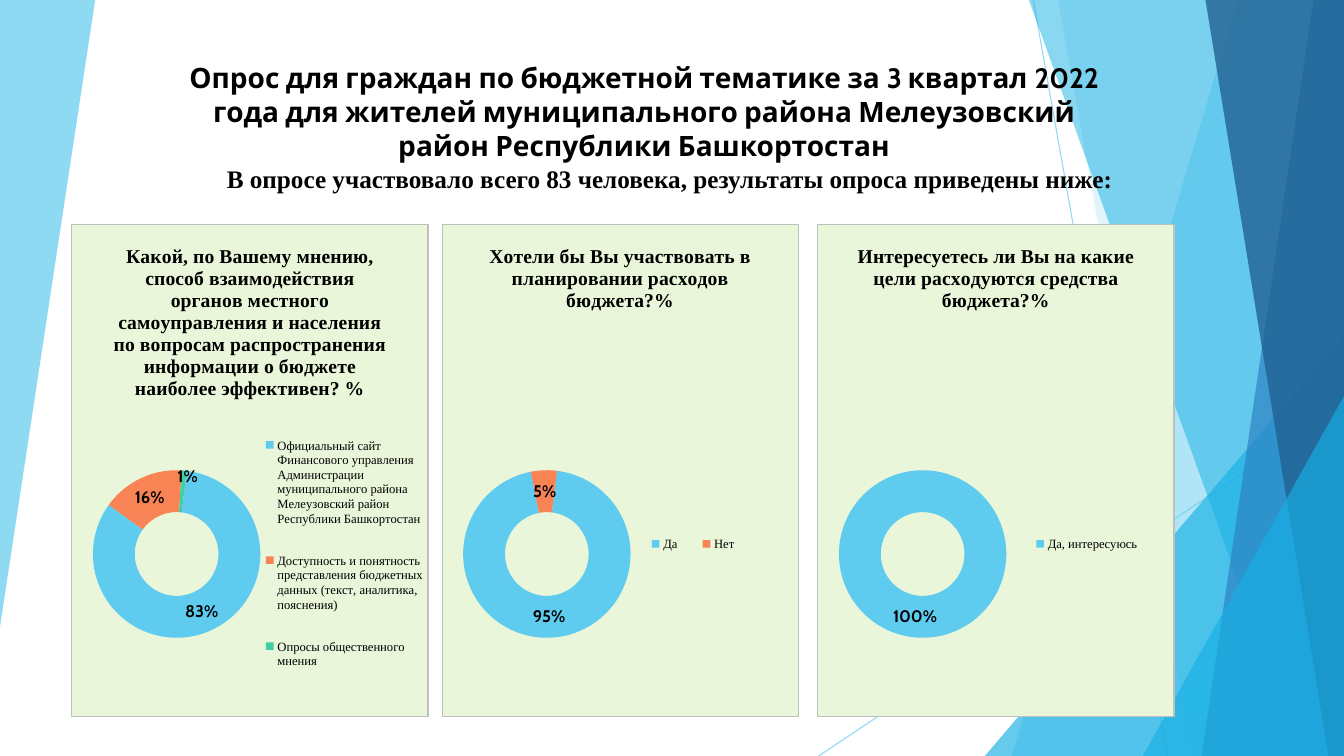
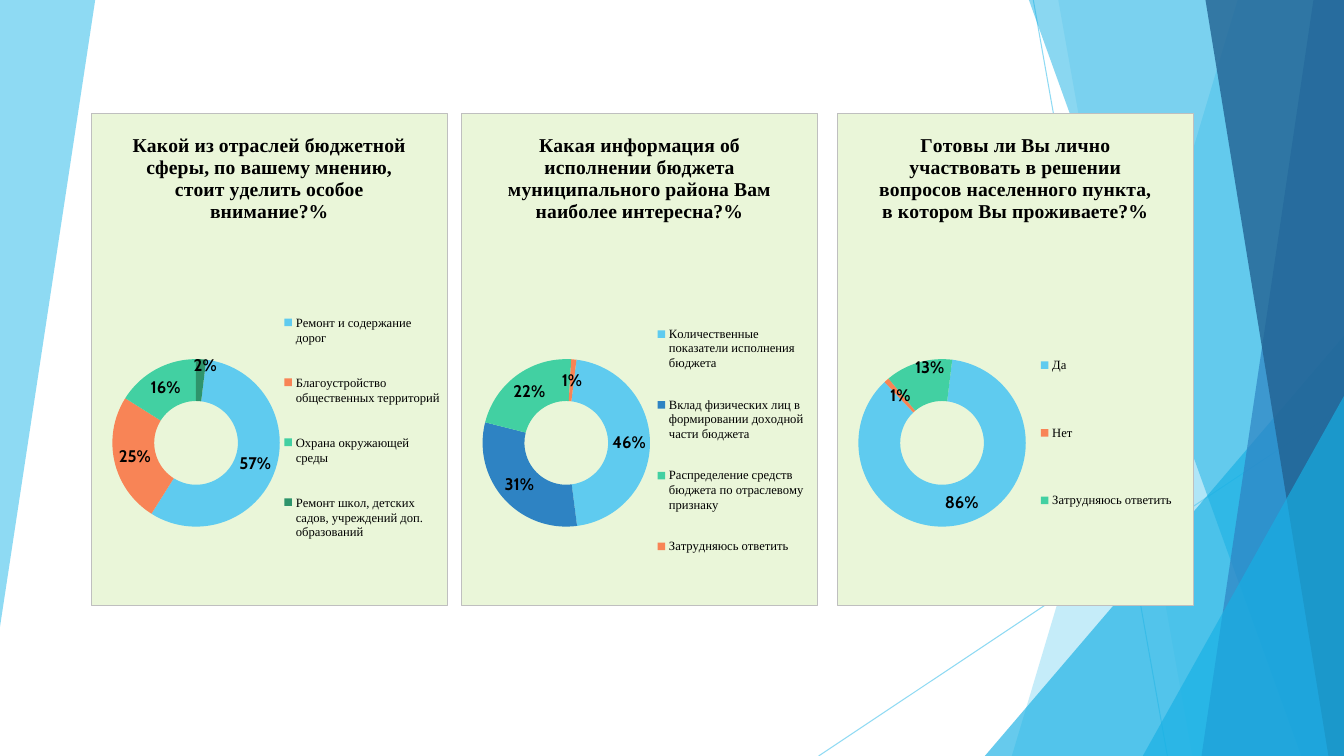
from dataclasses import dataclass

from lxml.etree import SubElement
from pptx import Presentation
from pptx.chart.data import CategoryChartData
from pptx.dml.color import RGBColor
from pptx.enum.chart import XL_CHART_TYPE, XL_LEGEND_POSITION
from pptx.enum.shapes import MSO_CONNECTOR, MSO_SHAPE
from pptx.enum.text import MSO_ANCHOR, PP_ALIGN
from pptx.oxml import parse_xml
from pptx.oxml.ns import nsdecls, qn
from pptx.util import Cm, Pt


@dataclass(frozen=True)
class Theme:
    sky: str = "5FCBEF"
    cyan: str = "17B0E4"
    blue: str = "2E83C3"
    navy: str = "226292"
    orange: str = "F88456"
    mint: str = "42D0A2"
    green: str = "2E946B"
    panel: str = "EAF6D9"
    border: str = "BFBFBF"
    text: str = "000000"
    sans: str = "Cabin"
    serif: str = "Times New Roman"
    title: int = 20
    subtitle: int = 18
    chart_title: int = 14
    label: int = 12
    body: int = 10
    legend: int = 9


T = Theme()
WIDTH, HEIGHT = 33.87, 19.05
PANEL_W, PANEL_H = 9.0, 12.42
PANEL_LEFTS = (0, 9.33, 18.8)
PLOT_BOX = (0.059, 0.433, 0.47, 0.475)
LABEL_SHIFT = (0.015, -0.03)

TITLE = ("Опрос для граждан по бюджетной тематике за 3 квартал 2022 года для жителей "
         "муниципального района Мелеузовский район Республики Башкортостан")
SUBTITLE = "В опросе участвовало всего 83 человека, результаты опроса приведены ниже:"

SLIDES = [
    {"title": TITLE, "subtitle": SUBTITLE, "origin": (1.8, 5.64), "charts": [
        {"title": "Какой, по Вашему мнению, способ взаимодействия органов местного самоуправления "
                  "и населения по вопросам распространения информации о бюджете наиболее эффективен? %",
         "answers": [
             ("Официальный сайт Финансового управления Администрации муниципального района "
              "Мелеузовский район Республики Башкортостан", 83, T.sky),
             ("Доступность и понятность представления бюджетных данных "
              "(текст, аналитика, пояснения)", 16, T.orange),
             ("Опросы общественного мнения", 1, T.mint)],
         "legend": (0.53, 0.38, 0.47, 0.58), "shifted": 2},
        {"title": "Хотели бы Вы участвовать в планировании расходов бюджета?%",
         "answers": [("Да", 95, T.sky), ("Нет", 5, T.orange)],
         "legend": (0.53, 0.39, 0.35, 0.52)},
        {"title": "Интересуетесь ли Вы на какие цели расходуются средства бюджета?%",
         "answers": [("Да, интересуюсь", 100, T.sky)],
         "legend": (0.53, 0.39, 0.45, 0.52)},
    ]},
    {"origin": (2.29, 2.84), "charts": [
        {"title": "Какой из отраслей бюджетной сферы, по вашему мнению, "
                  "стоит уделить особое внимание?%",
         "answers": [
             ("Ремонт и содержание дорог", 57, T.sky),
             ("Благоустройство общественных территорий", 25, T.orange),
             ("Охрана окружающей среды", 16, T.mint),
             ("Ремонт школ, детских садов, учреждений доп. образований", 2, T.green)],
         "legend": (0.54, 0.35, 0.44, 0.58), "shifted": 3},
        {"title": "Какая информация об исполнении бюджета муниципального района "
                  "Вам наиболее интересна?%",
         "answers": [
             ("Количественные показатели исполнения бюджета", 46, T.sky),
             ("Вклад физических лиц в формировании доходной части бюджета", 31, T.blue),
             ("Распределение средств бюджета по отраслевому признаку", 22, T.mint),
             ("Затрудняюсь ответить", 1, T.orange)],
         "legend": (0.53, 0.38, 0.45, 0.57)},
        {"title": "Готовы ли Вы лично участвовать в решении вопросов населенного пункта, "
                  "в котором Вы проживаете?%",
         "answers": [("Да", 86, T.sky), ("Нет", 1, T.orange), ("Затрудняюсь ответить", 13, T.mint)],
         "legend": (0.53, 0.39, 0.45, 0.52), "shifted": 2},
    ]},
]

DECOR = [
    ("polygon", [(0, 0), (2.4, 0), (0, 15.8)], T.sky, 70),
    ("line", [(26.04, 0), (29.42, HEIGHT)], T.sky, 70),
    ("line", [(WIDTH, 10.23), (20.63, HEIGHT)], T.sky, 70),
    ("polygon", [(31.19, 0), (WIDTH, 0), (WIDTH, HEIGHT), (25.5, HEIGHT)], T.sky, 36),
    ("polygon", [(26.67, 0), (WIDTH, 0), (WIDTH, HEIGHT), (30.05, HEIGHT)], T.sky, 20),
    ("triangle", [(24.82, 8.46), (WIDTH, HEIGHT)], T.cyan, 66),
    ("polygon", [(25.93, 0), (WIDTH, 0), (WIDTH, HEIGHT), (32.79, HEIGHT)], T.cyan, 50),
    ("polygon", [(33.1, 0), (WIDTH, 0), (WIDTH, HEIGHT), (30.28, HEIGHT)], T.blue, 70),
    ("polygon", [(30.38, 0), (WIDTH, 0), (WIDTH, HEIGHT), (33.48, HEIGHT)], T.navy, 80),
    ("triangle", [(28.8, 9.98), (WIDTH, HEIGHT)], T.cyan, 66),
]


def set_font(font, size, name, bold=False):
    font.size = Pt(size)
    font.name = name
    font.bold = bold
    font.color.rgb = RGBColor.from_string(T.text)


def write_text(tf, text, size, name, bold=True, align=PP_ALIGN.CENTER):
    p = tf.paragraphs[0]
    p.alignment = align
    r = p.add_run()
    r.text = text
    set_font(r.font, size, name, bold)


def place(sp, left, top, width, height):
    sp.left, sp.top, sp.width, sp.height = map(Cm, (left, top, width, height))


def set_alpha(sp, percent):
    color = sp.element.spPr.find(".//" + qn("a:srgbClr"))
    SubElement(color, qn("a:alpha")).set("val", str(percent * 1000))


def draw_decor(shapes, kind, points, color, alpha):
    points = [(Cm(x), Cm(y)) for x, y in points]
    if kind == "line":
        sp = shapes.add_connector(MSO_CONNECTOR.STRAIGHT, *points[0], *points[1])
        sp.line.width = Pt(0.75)
        sp.line.color.rgb = RGBColor.from_string(color)
        SubElement(sp.element.spPr, qn("a:effectLst"))
    else:
        if kind == "polygon":
            builder = shapes.build_freeform(*points[0])
            builder.add_line_segments(points[1:], close=True)
            sp = builder.convert_to_shape()
        else:
            (left, top), (right, bottom) = points
            sp = shapes.add_shape(MSO_SHAPE.ISOSCELES_TRIANGLE, left, top, right - left, bottom - top)
            sp.adjustments[0] = 1
        sp.shadow.inherit = False
        sp.fill.solid()
        sp.fill.fore_color.rgb = RGBColor.from_string(color)
        sp.line.fill.background()
    set_alpha(sp, alpha)
    return sp


def decorate_master(prs, s):
    tree = prs.slide_master.shapes.element
    for i, item in enumerate(DECOR):
        element = draw_decor(s.shapes, *item).element
        element.xpath(".//p:cNvPr")[0].set("id", str(100 + i))
        tree.insert(2 + i, element)


def manual_layout(box, absolute=True, inner=False):
    target = '<c:layoutTarget val="inner"/>' if inner else ""
    modes = '<c:xMode val="edge"/><c:yMode val="edge"/>' if absolute else ""
    sizes = "".join(f'<c:{key} val="{value}"/>' for key, value in zip("xywh", box))
    return parse_xml(f'<c:layout {nsdecls("c")}><c:manualLayout>{target}{modes}{sizes}'
                     "</c:manualLayout></c:layout>")


def style_panel(chart):
    root = chart.element
    root.find(qn("c:chart")).addnext(parse_xml(
        f'<c:spPr {nsdecls("c", "a")}><a:solidFill><a:srgbClr val="{T.panel}"/></a:solidFill>'
        f'<a:ln w="{Pt(0.75)}"><a:solidFill><a:srgbClr val="{T.border}"/></a:solidFill></a:ln></c:spPr>'))
    area = root.xpath("c:chart/c:plotArea")[0]
    for old in area.findall(qn("c:layout")):
        area.remove(old)
    area.insert(0, manual_layout(PLOT_BOX, inner=True))
    root.xpath(".//c:firstSliceAng")[0].set("val", "7")
    root.xpath(".//c:holeSize")[0].set("val", "50")


def add_legend(chart, box):
    chart.has_legend = True
    legend = chart.legend
    legend.position = XL_LEGEND_POSITION.RIGHT
    legend.include_in_layout = False
    set_font(legend.font, T.legend, T.serif)
    element = chart.element.xpath("c:chart/c:legend")[0]
    for old in element.findall(qn("c:layout")):
        element.remove(old)
    element.find(qn("c:legendPos")).addnext(manual_layout(box))


def shift_label(chart, series, index):
    set_font(series.points[index].data_label.font, T.label, T.sans, bold=True)
    label = chart.element.xpath(".//c:ser/c:dLbls/c:dLbl")[0]
    label.find(qn("c:idx")).addnext(manual_layout(LABEL_SHIFT, absolute=False))
    label.find(qn("c:showVal")).set("val", "0")
    label.find(qn("c:showPercent")).set("val", "1")


def add_doughnut(s, left, top, title, answers, legend, shifted=None):
    names, values, colors = zip(*answers)
    data = CategoryChartData()
    data.categories = names
    data.add_series("Series 1", values)
    chart = s.shapes.add_chart(XL_CHART_TYPE.DOUGHNUT, Cm(left), Cm(top),
                               Cm(PANEL_W), Cm(PANEL_H), data).chart
    set_font(chart.font, T.body, T.sans)
    chart.has_title = True
    write_text(chart.chart_title.text_frame, title, T.chart_title, T.serif)
    chart.chart_title.include_in_layout = False
    add_legend(chart, legend)
    plot = chart.plots[0]
    plot.vary_by_categories = True
    series = plot.series[0]
    for i, color in enumerate(colors):
        fill = series.points[i].format.fill
        fill.solid()
        fill.fore_color.rgb = RGBColor.from_string(color)
    labels = series.data_labels
    labels.show_value = False
    labels.show_percentage = True
    set_font(labels.font, T.label, T.sans, bold=True)
    if shifted is not None:
        shift_label(chart, series, shifted)
    style_panel(chart)


def add_heading(s, title, subtitle):
    place(s.shapes.title, 4, 1.5, 24.46, 2.7)
    tf = s.shapes.title.text_frame
    tf.vertical_anchor = MSO_ANCHOR.BOTTOM
    write_text(tf, title, T.title, T.sans)
    tf = s.shapes.add_textbox(Cm(4.88), Cm(3.99), Cm(24), Cm(1.02)).text_frame
    tf.word_wrap = True
    write_text(tf, subtitle, T.subtitle, T.serif)


def main():
    prs = Presentation()
    prs.slide_width, prs.slide_height = Cm(WIDTH), Cm(HEIGHT)
    title_only, blank = prs.slide_layouts[5], prs.slide_layouts[6]
    for content in SLIDES:
        s = prs.slides.add_slide(title_only if "title" in content else blank)
        if "title" in content:
            add_heading(s, content["title"], content["subtitle"])
        left, top = content["origin"]
        for offset, chart in zip(PANEL_LEFTS, content["charts"]):
            add_doughnut(s, left + offset, top, **chart)
    decorate_master(prs, prs.slides[0])
    prs.save("out.pptx")


if __name__ == "__main__":
    main()
